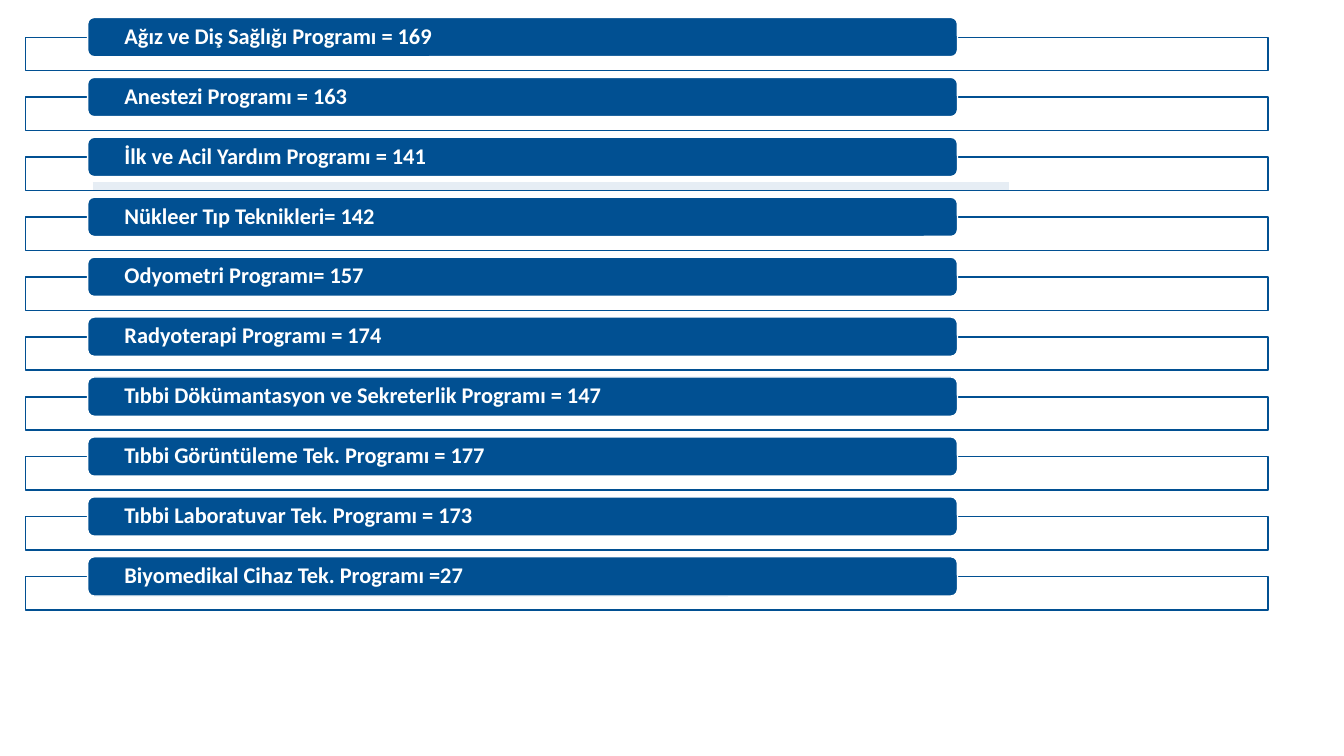
from lxml import etree
from pptx import Presentation
from pptx.dml.color import RGBColor
from pptx.enum.shapes import MSO_CONNECTOR, MSO_SHAPE
from pptx.enum.text import MSO_ANCHOR, PP_ALIGN
from pptx.oxml.ns import qn
from pptx.util import Cm, Pt

RECT, PILL = MSO_SHAPE.RECTANGLE, MSO_SHAPE.ROUNDED_RECTANGLE
STRAIGHT = MSO_CONNECTOR.STRAIGHT
MIDDLE, LEFT = MSO_ANCHOR.MIDDLE, PP_ALIGN.LEFT

BLUE, WHITE = "015092", "FFFFFF"
FIRST_TOP, ROW_PITCH = 0.44, 1.51
FRAME_DROP = 0.5

PROGRAMS = [
    "Ağız ve Diş Sağlığı Programı = 169",
    "Anestezi Programı = 163",
    "İlk ve Acil Yardım Programı = 141",
    "Nükleer Tıp Teknikleri= 142",
    "Odyometri Programı= 157",
    "Radyoterapi Programı = 174",
    "Tıbbi Dökümantasyon ve Sekreterlik Programı = 147",
    "Tıbbi Görüntüleme Tek. Programı = 177",
    "Tıbbi Laboratuvar Tek. Programı = 173",
    "Biyomedikal Cihaz Tek. Programı =27",
]


def rgb(color):
    return RGBColor.from_string(color)


def add_box(s, kind, left, top, width, height, fill, line):
    box = s.shapes.add_shape(kind, Cm(left), Cm(top), Cm(width), Cm(height))
    box.shadow.inherit = False
    box.fill.solid()
    box.fill.fore_color.rgb = rgb(fill)
    box.line.color.rgb = rgb(line)
    box.line.width = Pt(1)
    return box


def add_rule(s, left, right, y, color, width):
    rule = s.shapes.add_connector(STRAIGHT, Cm(left), Cm(y), Cm(right), Cm(y))
    rule.line.color.rgb = rgb(color)
    rule.line.width = Pt(width)
    etree.SubElement(rule._element.spPr, qn("a:effectLst"))


def add_frame(s, top):
    frame = add_box(s, RECT, 0.64, top, 31.32, 0.84, WHITE, BLUE)
    # Let the rule behind show through slightly
    color = frame.fill._xPr.find(qn("a:solidFill"))[0]
    etree.SubElement(color, qn("a:alpha"), val="90000")


def add_label(s, top, text):
    label = add_box(s, PILL, 2.21, top, 21.92, 0.99, BLUE, WHITE)
    tf = label.text_frame
    tf.word_wrap = True
    tf.vertical_anchor = MIDDLE
    tf.margin_left = tf.margin_right = Cm(0.88)
    tf.margin_top = tf.margin_bottom = 0
    p = tf.paragraphs[0]
    p.text = text
    p.alignment = LEFT
    p.line_spacing = 0.9
    p.font.name = "Calibri"
    p.font.size = Pt(16)
    p.font.bold = True
    p.font.color.rgb = rgb(WHITE)


def main():
    prs = Presentation()
    prs.slide_width, prs.slide_height = Cm(33.87), Cm(19.05)
    s = prs.slides.add_slide(prs.slide_layouts[6])

    # Rule behind the list
    add_rule(s, 2.34, 25.43, 4.7, BLUE, 6)

    # One framed label per program
    for i, program in enumerate(PROGRAMS):
        top = FIRST_TOP + i * ROW_PITCH
        add_frame(s, top + FRAME_DROP)
        add_label(s, top, program)

    prs.save("out.pptx")


if __name__ == "__main__":
    main()
